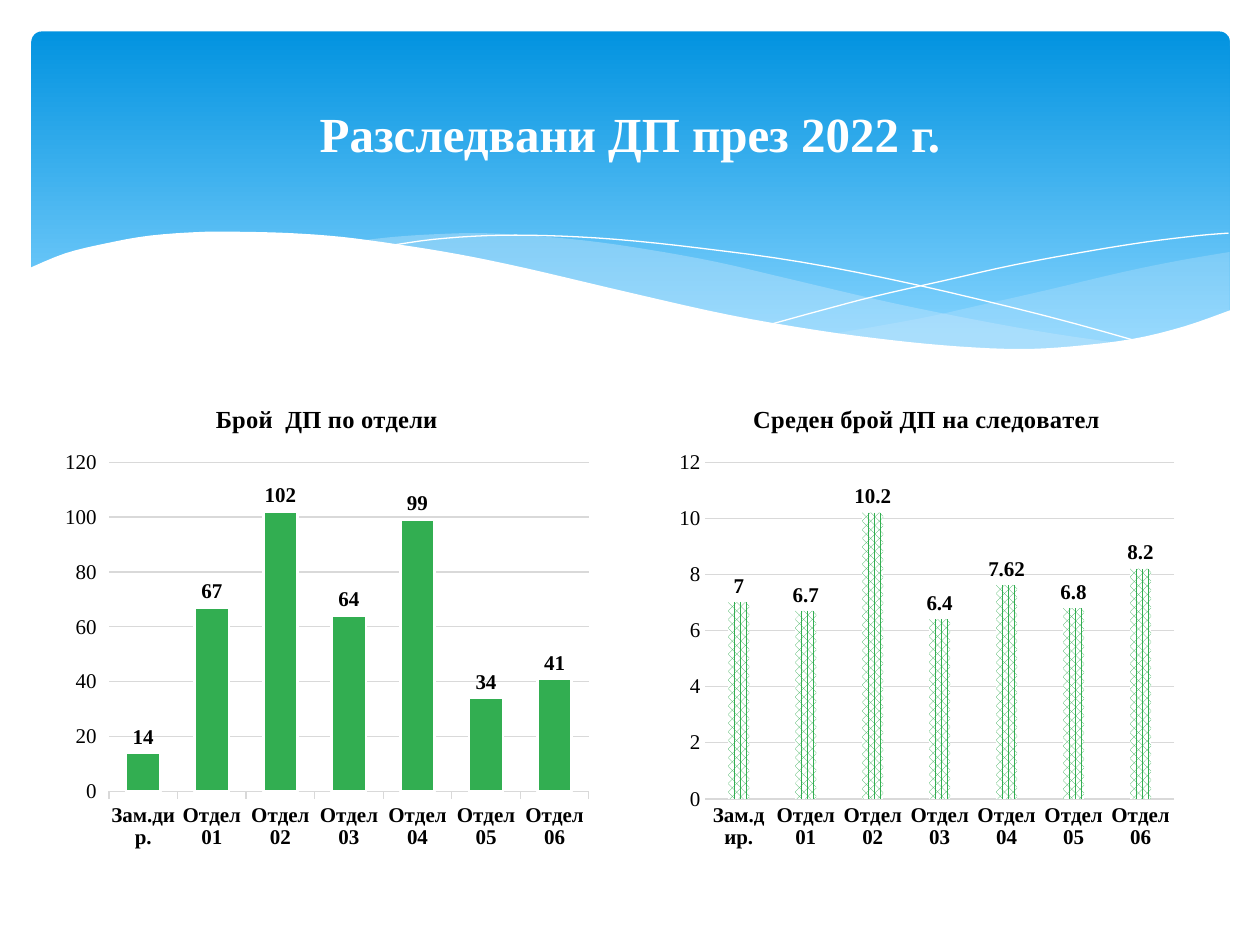
from pptx import Presentation, util as u
from pptx.chart.data import CategoryChartData
from pptx.dml.color import RGBColor
from pptx.enum import chart as ch, dml, shapes, text
from pptx.oxml.ns import qn
from lxml import etree

HUES = {"top": "0293E0", "low": "83D3FE", "mist": "C6E7FC", "white": "FFFFFF",
        "black": "000000", "bar": "32AE51", "grid": "D9D9D9"}
FACE = "Times New Roman"
TITLE = "Разследвани ДП през 2022 г."
CATS = ["Зам.дир."] + [f"Отдел {n:02}" for n in range(1, 7)]
CHARTS = [
    {"title": "Среден брой ДП на следовател", "at": (5.31, 3.04, 4.09, 3.77),
     "vals": [7, 6.7, 10.2, 6.4, 7.62, 6.8, 8.2], "tick": "NONE", "hatch": True,
     "plot": {"gap_width": 219, "overlap": -27},
     "scale": {"minimum_scale": 0, "maximum_scale": 12, "major_unit": 2}},
    {"title": "Брой  ДП по отдели", "at": (0.43, 3.04, 4.33, 3.77),
     "vals": [14, 67, 102, 64, 99, 34, 41], "tick": "OUTSIDE", "hatch": False,
     "plot": {"gap_width": 100, "overlap": 0},
     "scale": {"minimum_scale": 0, "maximum_scale": 120, "major_unit": 20}},
]

WAVES = [
    {"fill": "mist", "alpha": 29, "edges": [
        [(9.76, 2), (9.35, 2.07), (8.91, 2.16), (8.32, 2.3), (7.79, 2.42),
         (7.29, 2.53), (6.61, 2.65)],
        [(6.61, 2.65), (7.05, 2.71), (7.57, 2.76), (8.03, 2.78), (8.44, 2.77),
         (8.81, 2.73), (9.21, 2.65), (9.49, 2.57), (9.76, 2.47)]]},
    {"fill": "mist", "alpha": 40, "edges": [
        [(8.93, 2.73), (8.37, 2.65), (7.75, 2.54), (7.06, 2.4), (6.29, 2.22),
         (5.69, 2.08), (5.14, 1.98), (4.65, 1.91), (4.2, 1.87), (3.8, 1.85),
         (3.44, 1.86), (3.13, 1.88), (2.86, 1.91)],
        [(2.86, 1.91), (3.42, 1.99), (4.04, 2.11), (4.49, 2.22), (5.3, 2.4),
         (6.01, 2.55), (6.65, 2.66), (7.22, 2.74), (7.73, 2.77), (8.18, 2.78),
         (8.57, 2.77), (8.93, 2.73)]]},
    {"line": "white", "edges": [
        [(3.09, 1.95), (3.44, 1.9), (3.87, 1.87), (4.33, 1.87), (4.89, 1.9),
         (5.56, 1.97), (6.36, 2.08), (7.27, 2.26), (8.31, 2.51), (9.07, 2.72)]]},
    {"line": "white", "edges": [
        [(6.13, 2.57), (6.53, 2.46), (6.95, 2.35), (7.48, 2.23), (8.06, 2.1),
         (8.66, 1.99), (9.1, 1.92), (9.51, 1.87), (9.75, 1.85)]]},
    {"fill": "white", "edges": [
        [(9.77, 2.46), (9.4, 2.59), (8.99, 2.69), (8.5, 2.75), (8.09, 2.77),
         (7.61, 2.75), (7.08, 2.7), (6.48, 2.62), (5.79, 2.5), (5.03, 2.33),
         (4.18, 2.13), (3.65, 2.02), (3.16, 1.94), (2.71, 1.88), (2.3, 1.85),
         (1.93, 1.84), (1.61, 1.84), (1.19, 1.87), (0.85, 1.93), (0.52, 2.01),
         (0.23, 2.13)],
        [(0.23, 3.29), (9.77, 3.29)]]},
]


def rgb(name):
    return RGBColor.from_string(HUES[name])


def inch(box):
    return [u.Inches(n) for n in box]


def style(obj, **vals):
    for key, val in vals.items():
        setattr(obj, key, val)


def write(font, size, bold=False, hue="black"):
    style(font, name=FACE, size=u.Pt(size), bold=bold)
    font.color.rgb = rgb(hue)


def paint(fill, name):
    fill.solid()
    fill.fore_color.rgb = rgb(name)


def stroke(line, name, width):
    paint(line.fill, name)
    line.width = u.Pt(width)


def smooth(pts, steps=4):
    if len(pts) < 3:
        return pts
    ends = [pts[0], *pts, pts[-1]]
    out = [pts[0]]
    for a, b, c, d in zip(ends, ends[1:], ends[2:], ends[3:]):
        for t in (n / steps for n in range(1, steps + 1)):
            out.append(tuple(
                (2*q + (r-p)*t + (2*p-5*q+4*r-s)*t*t + (3*q-p-3*r+s)*t**3) / 2
                for p, q, r, s in zip(a, b, c, d)))
    return out


def wave(tree, edges, fill=None, line=None, alpha=None):
    pts = [inch(p) for edge in edges for p in smooth(edge)]
    pen = tree.build_freeform(*pts[0])
    pen.add_line_segments(pts[1:], close=bool(fill))
    form = pen.convert_to_shape()
    form.shadow.inherit = False
    if fill:
        paint(form.fill, fill)
        form.line.fill.background()
    else:
        form.fill.background()
        stroke(form.line, line, 0)
    if alpha:
        tone = form.fill._xPr.find(".//" + qn("a:srgbClr"))
        etree.SubElement(tone, qn("a:alpha"), val=str(alpha * 1000))


def graph(tree, item):
    data = CategoryChartData()
    data.categories = CATS
    data.add_series("Series 1", item["vals"])
    chart = tree.add_chart(ch.XL_CHART_TYPE.COLUMN_CLUSTERED,
                           *inch(item["at"]), data).chart
    write(chart.font, 10)
    style(chart, has_legend=False, has_title=True)
    head = chart.chart_title.text_frame
    head.text = item["title"]
    write(head.paragraphs[0].runs[0].font, 14, True)

    cat, val = chart.category_axis, chart.value_axis
    for axis, bold in ((cat, True), (val, False)):
        style(axis, major_tick_mark=ch.XL_TICK_MARK[item["tick"]],
              minor_tick_mark=ch.XL_TICK_MARK.NONE)
        write(axis.tick_labels.font, 12, bold)
    style(val, has_major_gridlines=True, **item["scale"])
    val.format.line.fill.background()
    for line in (cat.format.line, val.major_gridlines.format.line):
        stroke(line, "grid", 0.75)

    plot = chart.plots[0]
    style(plot, vary_by_categories=False, has_data_labels=True, **item["plot"])
    style(plot.data_labels, show_value=True,
          position=ch.XL_LABEL_POSITION.OUTSIDE_END)
    write(plot.data_labels.font, 12, True)
    look = plot.series[0].format
    if item["hatch"]:
        look.fill.patterned()
        look.fill.pattern = dml.MSO_PATTERN.PERCENT_70
        look.fill.fore_color.rgb = rgb("bar")
        look.fill.back_color.rgb = rgb("white")
        look.line.fill.background()
    else:
        paint(look.fill, "bar")
        stroke(look.line, "white", 1.5)


def main():
    deck = Presentation()
    style(deck, slide_width=u.Inches(10), slide_height=u.Inches(7.5))
    tree = deck.slides.add_slide(deck.slide_layouts[6]).shapes

    band = tree.add_shape(shapes.MSO_SHAPE.ROUNDED_RECTANGLE,
                          *inch((0.25, 0.25, 9.51, 2.7)))
    band.adjustments[0] = 0.03
    band.shadow.inherit = False
    band.line.fill.background()
    band.fill.gradient()
    band.fill.gradient_angle = 270
    for stop, name, pos in zip(band.fill.gradient_stops, ("top", "low"), (0, 0.9)):
        stop.color.rgb = rgb(name)
        stop.position = pos
    for item in WAVES:
        wave(tree, **item)

    frame = tree.add_textbox(*inch((0.5, 0.37, 9, 1.37))).text_frame
    style(frame, word_wrap=True, text=TITLE,
          vertical_anchor=text.MSO_ANCHOR.MIDDLE)
    para = frame.paragraphs[0]
    para.alignment = text.PP_ALIGN.CENTER
    write(para.runs[0].font, 28, True, "white")

    for item in CHARTS:
        graph(tree, item)
    deck.save("out.pptx")


if __name__ == "__main__":
    main()
